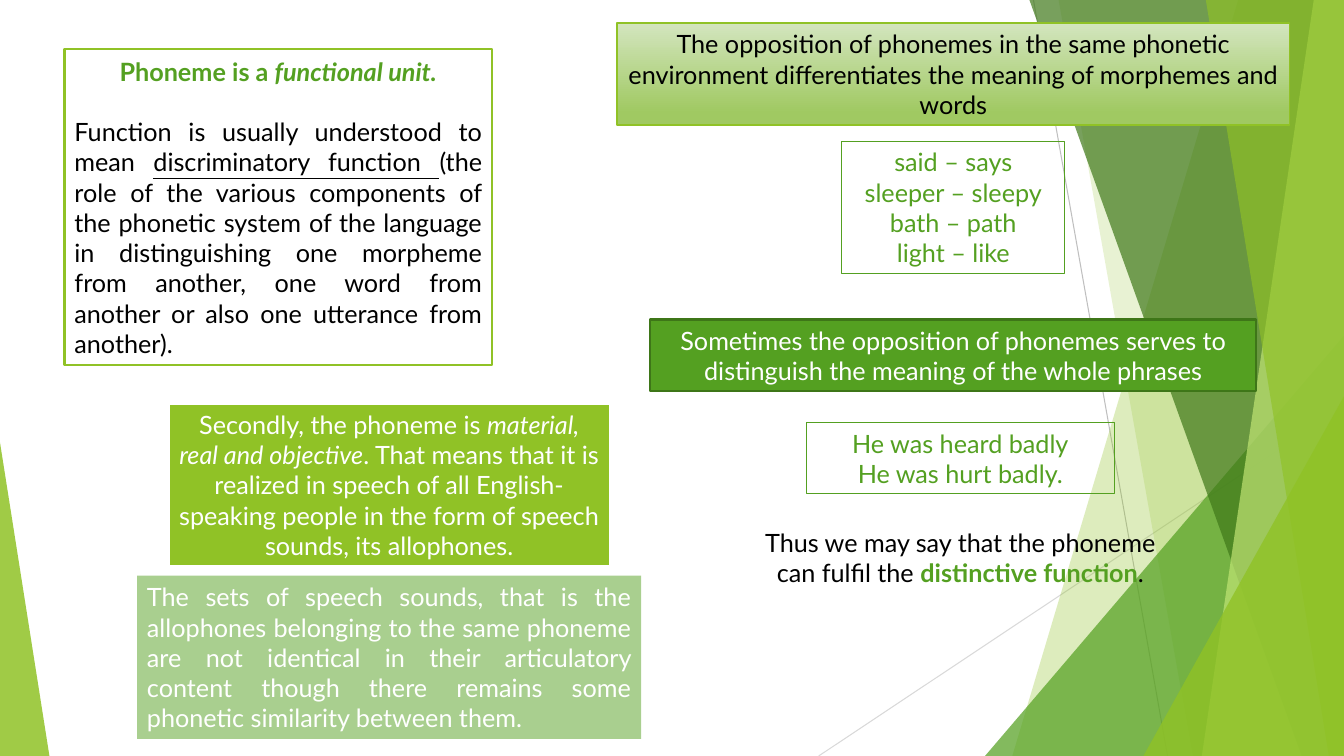
from dataclasses import dataclass

from lxml.etree import SubElement
from pptx import Presentation
from pptx.dml.color import RGBColor
from pptx.enum.shapes import MSO_CONNECTOR as Connector, MSO_SHAPE as Shape
from pptx.enum.text import MSO_ANCHOR as Anchor, PP_ALIGN as Align
from pptx.oxml.ns import qn
from pptx.util import Pt

PX = 9144  # EMU in one px, at 100 px to the inch
WIDTH, HEIGHT = 1333, 750


@dataclass(frozen=True)
class Theme:
    font: str = "Lato"
    size: float = 18
    line_gap: float = 21.6
    white: str = "FFFFFF"
    black: str = "000000"
    lime: str = "90C226"
    green: str = "54A021"
    forest: str = "3F7819"
    edge: str = "3E7618"
    pale_lime: str = "C0E474"
    grey: str = "BFBFBF"
    light_grey: str = "D9D9D9"
    gradient: tuple = ((0, "D3E5BE"), (0.88, "A0C962"))


THEME = Theme()


def rgb(color):
    return RGBColor.from_string(color)


def px(*lengths):
    return [length * PX for length in lengths]


def paint(shape, fill=None, alpha=100, line=None, line_width=0.75):
    """Set fill, opacity in percent and outline; a tuple of stops is a gradient."""
    shape.shadow.inherit = False
    if fill is None:
        shape.fill.background()
    elif isinstance(fill, tuple):
        shape.fill.gradient()
        shape.fill.gradient_angle = 270
        for stop, (position, color) in zip(shape.fill.gradient_stops, fill):
            stop.position, stop.color.rgb = position, rgb(color)
    else:
        shape.fill.solid()
        shape.fill.fore_color.rgb = rgb(fill)
        if alpha < 100:
            color = shape.element.spPr.find(qn("a:solidFill"))[0]
            SubElement(color, qn("a:alpha"), val=str(alpha * 1000))
    if line:
        shape.line.color.rgb = rgb(line)
        shape.line.width = Pt(line_width)
    else:
        shape.line.fill.background()


def add_line(page, start, end, color):
    line = page.shapes.add_connector(Connector.STRAIGHT, *px(*start, *end))
    line.line.color.rgb = rgb(color)
    line.line.width = Pt(0.75)
    SubElement(line.element.spPr, qn("a:effectLst"))


def add_band(page, top_left, bottom_left, color, alpha):
    """A facet that reaches from a slanted left side to the slide's right edge."""
    builder = page.shapes.build_freeform(top_left, 0, scale=PX)
    builder.add_line_segments([(WIDTH, 0), (WIDTH, HEIGHT), (bottom_left, HEIGHT)])
    paint(builder.convert_to_shape(), color, alpha)


def add_corner(page, left, top, width, apex, color, alpha):
    """A right triangle that stands on the slide's bottom edge."""
    corner = page.shapes.add_shape(
        Shape.ISOSCELES_TRIANGLE, *px(left, top, width, HEIGHT - top))
    corner.adjustments[0] = apex
    paint(corner, color, alpha)


def add_span(para, text, color, bold=False, italic=False, underline=False):
    span = para.add_run()
    span.text = text
    font = span.font
    font.name, font.size = THEME.font, Pt(THEME.size)
    font.color.rgb = rgb(color)
    font.bold, font.italic, font.underline = bold, italic, underline


def add_para(frame, *spans, color, align=Align.CENTER, gap=0, **format):
    """Write one paragraph; a span is a text, or a text with its own format."""
    first = frame.paragraphs[0]
    para = frame.add_paragraph() if first.runs else first
    para.alignment = align
    para.space_after = Pt(gap)
    for span in spans:
        text, own = (span, {}) if isinstance(span, str) else span
        add_span(para, text, **{"color": color, **format, **own})


def add_box(page, *place, **look):
    box = page.shapes.add_shape(Shape.RECTANGLE, *px(*place))
    paint(box, **look)
    box.text_frame.word_wrap = True
    box.text_frame.vertical_anchor = Anchor.MIDDLE
    return box.text_frame


def add_text(page, *place):
    frame = page.shapes.add_textbox(*px(*place)).text_frame
    frame.word_wrap = True
    return frame


def draw_facets(page):
    add_line(page, (1025, 0), (1158, HEIGHT), THEME.grey)
    add_line(page, (WIDTH, 403), (812, HEIGHT), THEME.light_grey)
    add_band(page, 1228, 1004, THEME.lime, 30)
    add_band(page, 1050, 1183, THEME.lime, 20)
    add_corner(page, 977, 333, 356, 1, THEME.green, 72)
    add_band(page, 1021, 1291, THEME.forest, 70)
    add_band(page, 1303, 1192, THEME.pale_lime, 70)
    add_band(page, 1196, 1318, THEME.lime, 65)
    add_corner(page, 1134, 393, 199, 1, THEME.lime, 80)
    add_corner(page, 0, 439, 49, 0, THEME.lime, 85)


def draw_definition(page):
    # Functional unit
    frame = add_box(page, 64, 49, 424, 313, fill=THEME.white,
                    line=THEME.lime, line_width=1.5)
    add_para(frame, "Phoneme is a ", ("functional unit.", {"italic": True}),
             color=THEME.green, bold=True, gap=THEME.line_gap)
    add_para(frame, "Function is usually understood to mean ",
             ("discriminatory function ", {"underline": True}),
             "(the role of the various components of the phonetic system of the "
             "language in distinguishing one morpheme from another, one word from "
             "another or also one utterance from another).",
             color=THEME.black, align=Align.JUSTIFY)

    # Allophones
    frame = add_box(page, 136, 571, 500, 162, fill=THEME.green, alpha=50)
    add_para(frame, "The sets of speech sounds, that is the allophones belonging to "
             "the same phoneme are not identical in their articulatory content "
             "though there remains some phonetic similarity between them.",
             color=THEME.white, align=Align.JUSTIFY)

    # Material unit
    frame = add_box(page, 167, 400, 438, 162, fill=THEME.lime,
                    line=THEME.white, line_width=2)
    add_para(frame, "Secondly, the phoneme is ",
             ("material, real and objective", {"italic": True}),
             ". That means that it is realized in speech of all English-speaking "
             "people in the form of speech sounds, its allophones.",
             color=THEME.white)


def draw_oppositions(page):
    # Statements
    frame = add_box(page, 612, 23, 667, 101, fill=THEME.gradient,
                    line=THEME.lime, line_width=1)
    add_para(frame, "The opposition of phonemes in the same phonetic environment "
             "differentiates the meaning of morphemes and words", color=THEME.black)
    frame = add_box(page, 645, 317, 601, 71, fill=THEME.green,
                    line=THEME.edge, line_width=1.5)
    add_para(frame, "Sometimes the opposition of phonemes serves to distinguish "
             "the meaning of the whole phrases", color=THEME.white)

    # Examples
    examples = (
        ((835, 140, 221, 131),
         ("said – says", "sleeper – sleepy", "bath – path", "light – like")),
        ((800, 419, 305, 71), ("He was heard badly", "He was hurt badly.")),
    )
    for place, lines in examples:
        frame = add_box(page, *place, line=THEME.green)
        for line in lines:
            add_para(frame, line, color=THEME.green)

    # Conclusion
    frame = add_text(page, 739, 518, 427, 71)
    add_para(frame, "Thus we may say that the phoneme can fulfil the ",
             ("distinctive function", {"color": THEME.green, "bold": True}), ".",
             color=THEME.black)


def main():
    deck = Presentation()
    deck.slide_width, deck.slide_height = px(WIDTH, HEIGHT)
    page = deck.slides.add_slide(deck.slide_layouts.get_by_name("Blank"))
    draw_facets(page)
    draw_definition(page)
    draw_oppositions(page)
    deck.save("out.pptx")


if __name__ == "__main__":
    main()
